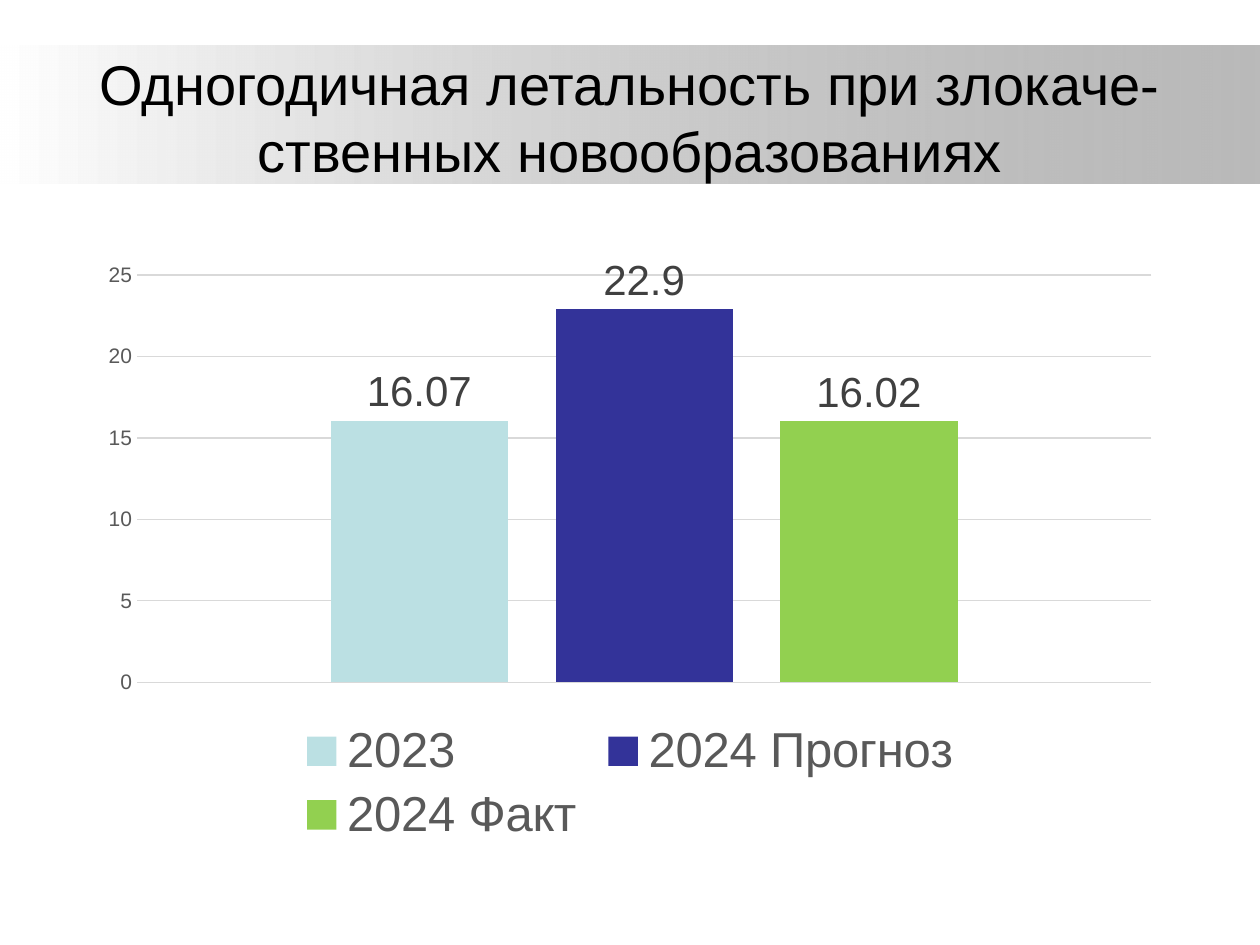
from dataclasses import dataclass

from lxml import etree
from pptx import Presentation
from pptx import util as u
from pptx.chart.data import CategoryChartData
from pptx.dml.color import RGBColor
from pptx.enum import chart as charts, shapes, text
from pptx.oxml.ns import qn


@dataclass(frozen=True)
class Theme:
    font: str = "Arial"
    black: str = "000000"
    band_start: str = "FFFFFF"
    band_end: str = "808080"
    band_end_opacity: int = 54
    axis_text: str = "595959"
    label_text: str = "404040"
    grid: str = "D9D9D9"
    title_size: int = 32
    legend_size: int = 28
    label_size: int = 24
    axis_size: int = 12
    chart_size: int = 10


def color(value):
    return RGBColor.from_string(value)


class SlideBuilder:
    def __init__(self, slide, theme):
        self.slide = slide
        self.theme = theme

    def style(self, font, size, value):
        font.name = self.theme.font
        font.size = u.Pt(size)
        font.bold = False
        font.color.rgb = color(value)

    def band(self, *place):
        theme = self.theme
        band = self.slide.shapes.add_shape(
            shapes.MSO_SHAPE.RECTANGLE, *map(u.Inches, place))
        band.shadow.inherit = False
        band.line.fill.background()
        band.fill.gradient()
        band.fill.gradient_angle = 0
        stops = band.fill.gradient_stops
        for stop, value, position in zip(stops, (theme.band_start, theme.band_end), (0, 1)):
            stop.color.rgb = color(value)
            stop.position = position
        end_color = list(band._element.spPr.iter(qn("a:srgbClr")))[-1]
        alpha = etree.SubElement(end_color, qn("a:alpha"))
        alpha.set("val", str(theme.band_end_opacity * 1000))

    def title(self, words, *place):
        box = self.slide.shapes.add_textbox(*map(u.Inches, place))
        frame = box.text_frame
        frame.word_wrap = True
        frame.vertical_anchor = text.MSO_ANCHOR.MIDDLE
        para = frame.paragraphs[0]
        para.alignment = text.PP_ALIGN.CENTER
        span = para.add_run()
        span.text = words
        self.style(span.font, self.theme.title_size, self.theme.black)

    def column_chart(self, category, columns, *place):
        theme = self.theme
        data = CategoryChartData()
        data.categories = [category]
        for name, value, _ in columns:
            data.add_series(name, [value])
        chart = self.slide.shapes.add_chart(
            charts.XL_CHART_TYPE.COLUMN_CLUSTERED, *map(u.Inches, place), data).chart
        self.style(chart.font, theme.chart_size, theme.black)
        chart.has_title = False

        chart.has_legend = True
        chart.legend.position = charts.XL_LEGEND_POSITION.BOTTOM
        chart.legend.include_in_layout = False
        self.style(chart.legend.font, theme.legend_size, theme.axis_text)

        chart.category_axis.visible = False
        axis = chart.value_axis
        axis.major_tick_mark = charts.XL_TICK_MARK.NONE
        axis.minor_tick_mark = charts.XL_TICK_MARK.NONE
        axis.format.line.fill.background()
        axis.has_major_gridlines = True
        grid = axis.major_gridlines.format.line
        grid.color.rgb = color(theme.grid)
        grid.width = u.Pt(0.75)
        self.style(axis.tick_labels.font, theme.axis_size, theme.axis_text)

        plot = chart.plots[0]
        plot.vary_by_categories = False
        plot.gap_width = 219
        plot.overlap = -27
        for series, (_, _, fill) in zip(plot.series, columns):
            series.invert_if_negative = False
            series.format.fill.solid()
            series.format.fill.fore_color.rgb = color(fill)
            labels = series.data_labels
            labels.show_value = True
            labels.position = charts.XL_LABEL_POSITION.OUTSIDE_END
            self.style(labels.font, theme.label_size, theme.label_text)


def main():
    deck = Presentation()
    deck.slide_width = u.Inches(10)
    deck.slide_height = u.Inches(7.5)
    page = SlideBuilder(deck.slides.add_slide(deck.slide_layouts[6]), Theme())

    page.band(0, 0.36, 10, 1.1)
    page.title("Одногодичная летальность при злокаче-ственных новообразованиях",
               0.5, 0.3, 9, 1.25)
    columns = [
        ("2023", 16.07, "BBE0E3"),
        ("2024 Прогноз", 22.9, "333399"),
        ("2024 Факт", 16.02, "92D050"),
    ]
    page.column_chart("1", columns, 0.69, 2, 8.62, 4.76)
    deck.save("out.pptx")


if __name__ == "__main__":
    main()
